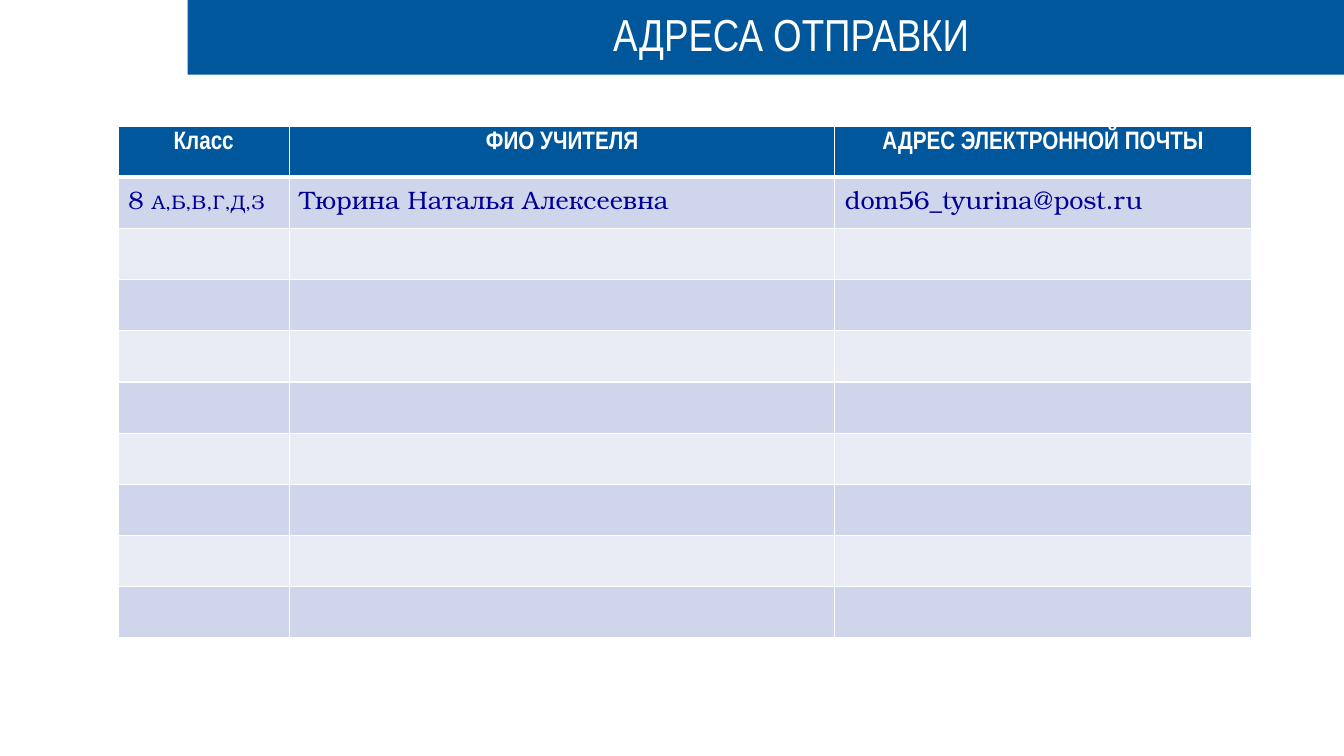
from lxml.etree import SubElement
from pptx import Presentation
from pptx.dml.color import RGBColor
from pptx.enum.text import MSO_ANCHOR, PP_ALIGN
from pptx.oxml.ns import qn
from pptx.util import Inches, Pt

COLORS = {
    "blue": "00579C",
    "navy": "000099",
    "white": "FFFFFF",
    "band_dark": "CFD5EA",
    "band_light": "E9EBF5",
}
HEADINGS = ["Класс", "ФИО УЧИТЕЛЯ", "АДРЕС ЭЛЕКТРОННОЙ ПОЧТЫ"]
TEACHER = [
    [("8 ", 18), ("А,Б,В,Г,Д,З", 14)],
    [("Тюрина Наталья Алексеевна", 18)],
    [("dom56_tyurina@post.ru", 18)],
]
COLUMN_WIDTHS = [1.7, 5.41, 4.13]
ROW_COUNT = 10
TABLE_HEIGHT = 5.08


def color(name):
    return RGBColor.from_string(COLORS[name])


def paint(target, name):
    target.fill.solid()
    target.fill.fore_color.rgb = color(name)


def add_text(paragraph, text, *, font, ink, size=18, bold=False, align=PP_ALIGN.LEFT):
    paragraph.alignment = align
    run = paragraph.add_run()
    run.text = text
    run.font.name = font
    run.font.size = Pt(size)
    run.font.bold = bold
    run.font.color.rgb = color(ink)


def format_title(title, text):
    title.left, title.top = Inches(1.86), Inches(0)
    title.width, title.height = Inches(11.98), Inches(0.74)
    paint(title, "blue")
    title.text_frame.vertical_anchor = MSO_ANCHOR.MIDDLE
    paragraph = title.text_frame.paragraphs[0]
    paragraph.line_spacing = 0.9
    add_text(paragraph, text, font="Arial Narrow", ink="white", size=32, align=PP_ALIGN.CENTER)


def format_cell(cell, fill, **border_widths):
    properties = cell._tc.get_or_add_tcPr()
    for side in ("L", "R", "T", "B"):
        width = Pt(border_widths.get(side, 1))
        border = SubElement(properties, qn(f"a:ln{side}"), w=str(width))
        solid = SubElement(border, qn("a:solidFill"))
        SubElement(solid, qn("a:srgbClr"), val=COLORS["white"])
    paint(cell, fill)


def fill_heading(cell, text):
    add_text(cell.text_frame.paragraphs[0], text, font="Arial Narrow", ink="white",
             bold=True, align=PP_ALIGN.CENTER)


def fill_entry(cell, parts):
    for text, size in parts:
        add_text(cell.text_frame.paragraphs[0], text, font="TeX Gyre Bonum", ink="navy", size=size)


def add_address_table(slide):
    addresses = slide.shapes.add_table(
        ROW_COUNT, len(HEADINGS), Inches(1.17), Inches(1.25),
        Inches(sum(COLUMN_WIDTHS)), Inches(TABLE_HEIGHT)).table
    for column, width in zip(addresses.columns, COLUMN_WIDTHS):
        column.width = Inches(width)
    for index, row in enumerate(addresses.rows):
        band = "band_dark" if index % 2 else "band_light"
        for cell in row.cells:
            if index == 0:
                format_cell(cell, "blue", B=3)
            else:
                format_cell(cell, band, T=3 if index == 1 else 1)
    for column, (heading, entry) in enumerate(zip(HEADINGS, TEACHER)):
        fill_heading(addresses.cell(0, column), heading)
        fill_entry(addresses.cell(1, column), entry)


def main():
    presentation = Presentation()
    presentation.slide_width, presentation.slide_height = Inches(13.33), Inches(7.5)
    slide = presentation.slides.add_slide(presentation.slide_layouts[5])
    format_title(slide.shapes.title, "АДРЕСА ОТПРАВКИ")
    add_address_table(slide)
    presentation.save("out.pptx")


if __name__ == "__main__":
    main()
